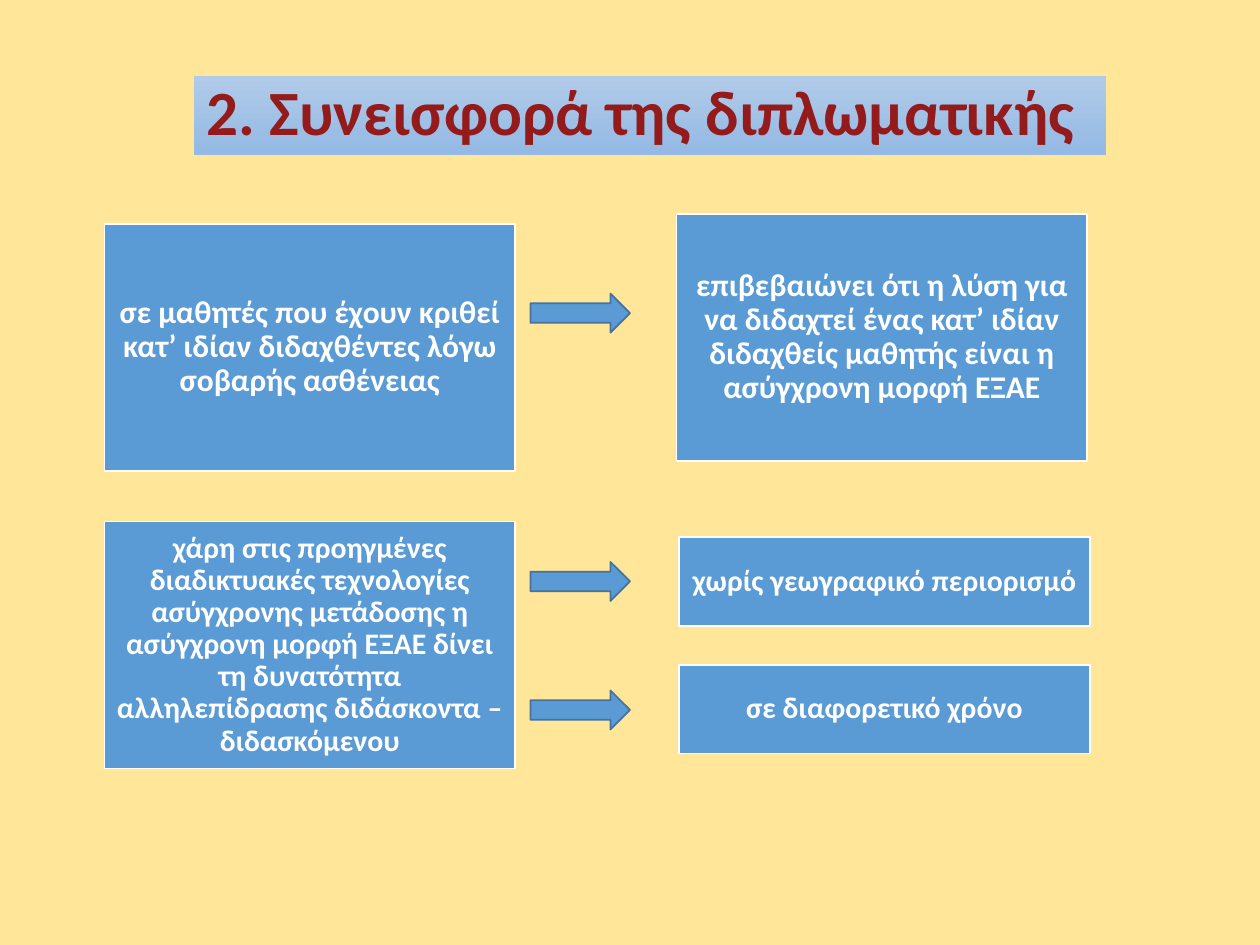
from dataclasses import dataclass

from pptx import Presentation
from pptx.dml.color import RGBColor
from pptx.enum.shapes import MSO_SHAPE
from pptx.enum.text import MSO_ANCHOR, MSO_AUTO_SIZE, PP_ALIGN
from pptx.util import Inches, Pt


@dataclass(frozen=True)
class Theme:
    font: str = "Calibri"
    background: str = "FFE699"
    title_text: str = "931B1B"
    title_top: str = "B1CBE9"
    title_bottom: str = "93B9E4"
    box: str = "5B9BD5"
    white: str = "FFFFFF"
    arrow_line: str = "43739E"
    title_size: int = 36
    large_size: int = 18
    small_size: int = 17


theme = Theme()


def write(shape, text, size, color, alignment):
    frame = shape.text_frame
    frame.text = text
    frame.word_wrap = True
    frame.auto_size = MSO_AUTO_SIZE.NONE
    frame.vertical_anchor = MSO_ANCHOR.MIDDLE
    paragraph = frame.paragraphs[0]
    paragraph.alignment = alignment
    paragraph.line_spacing = 0.9
    font = paragraph.runs[0].font
    font.name = theme.font
    font.size = Pt(size)
    font.bold = True
    font.color.rgb = RGBColor.from_string(color)


def add_block(kind, left, top, width, height, line_color):
    shape = slide.shapes.add_shape(
        kind, Inches(left), Inches(top), Inches(width), Inches(height))
    shape.shadow.inherit = False
    shape.fill.solid()
    shape.fill.fore_color.rgb = RGBColor.from_string(theme.box)
    shape.line.color.rgb = RGBColor.from_string(line_color)
    shape.line.width = Pt(1)
    return shape


presentation = Presentation()
presentation.slide_width = Inches(10)
presentation.slide_height = Inches(7.5)
slide = presentation.slides.add_slide(presentation.slide_layouts[5])
slide.background.fill.solid()
slide.background.fill.fore_color.rgb = RGBColor.from_string(theme.background)

# Title on a vertical gradient
title = slide.shapes.title
title.left, title.top = Inches(1.54), Inches(0.6)
title.width, title.height = Inches(7.24), Inches(0.63)
title.fill.gradient()
title.fill.gradient_angle = 270
for stop, color in zip(title.fill.gradient_stops, (theme.title_top, theme.title_bottom)):
    stop.color.rgb = RGBColor.from_string(color)
write(title, "2. Συνεισφορά της διπλωματικής", theme.title_size,
      theme.title_text, PP_ALIGN.LEFT)

# Boxes: left, top, height, type size, text
box_width = 3.26
boxes = [
    (0.83, 4.14, 1.96, theme.small_size,
     "χάρη στις προηγμένες διαδικτυακές τεχνολογίες ασύγχρονης μετάδοσης "
     "η ασύγχρονη μορφή ΕΞΑΕ δίνει τη δυνατότητα αλληλεπίδρασης "
     "διδάσκοντα – διδασκόμενου"),
    (5.37, 1.7, 1.96, theme.large_size,
     "επιβεβαιώνει ότι η λύση για να διδαχτεί ένας κατ’ ιδίαν διδαχθείς "
     "μαθητής είναι η ασύγχρονη μορφή ΕΞΑΕ"),
    (0.83, 1.78, 1.96, theme.large_size,
     "σε μαθητές που έχουν κριθεί κατ’ ιδίαν διδαχθέντες λόγω σοβαρής ασθένειας"),
    (5.39, 4.26, 0.71, theme.small_size, "χωρίς γεωγραφικό περιορισμό"),
    (5.39, 5.28, 0.7, theme.small_size, "σε διαφορετικό χρόνο"),
]
for left, top, height, size, text in boxes:
    box = add_block(MSO_SHAPE.RECTANGLE, left, top, box_width, height, theme.white)
    frame = box.text_frame
    frame.margin_left = frame.margin_right = Inches(0.07)
    frame.margin_top = frame.margin_bottom = Inches(0.07)
    write(box, text, size, theme.white, PP_ALIGN.CENTER)

# Arrows between the columns
for top in (2.33, 4.46, 5.48):
    add_block(MSO_SHAPE.RIGHT_ARROW, 4.21, top, 0.79, 0.31, theme.arrow_line)

presentation.save("out.pptx")
